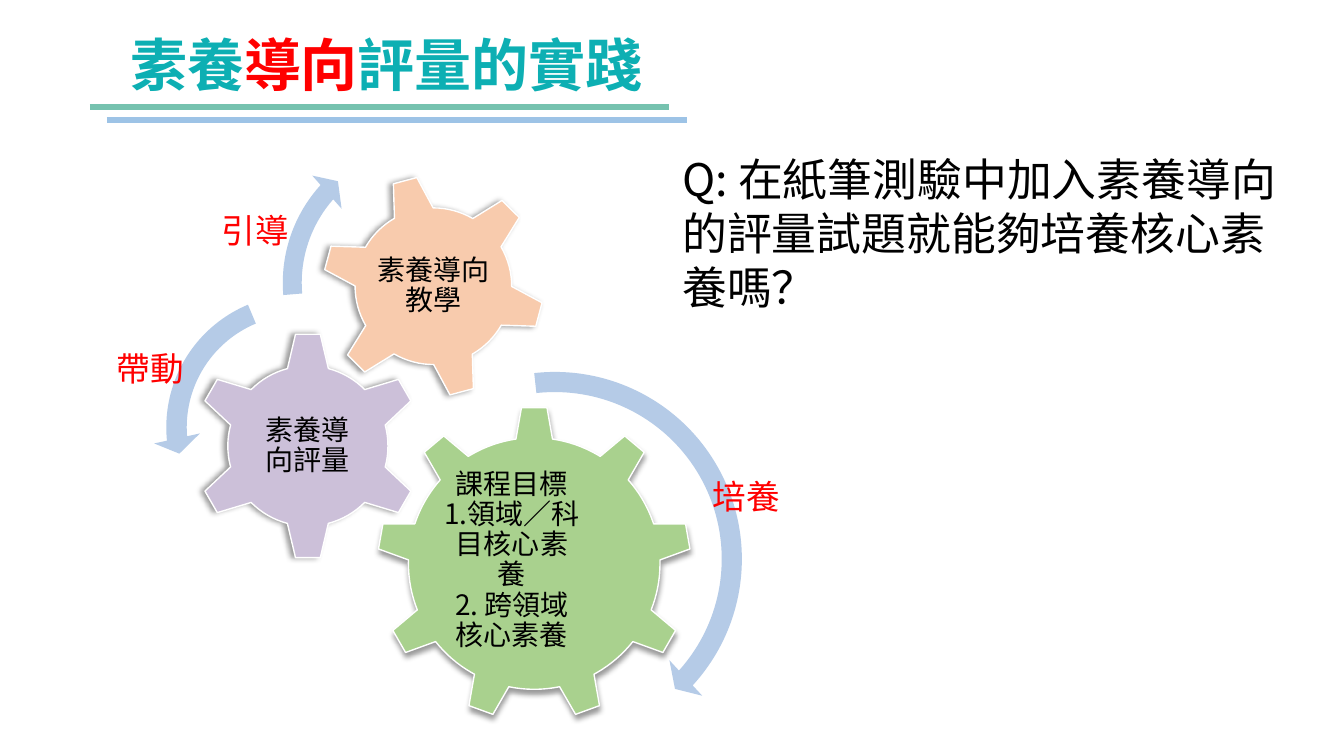
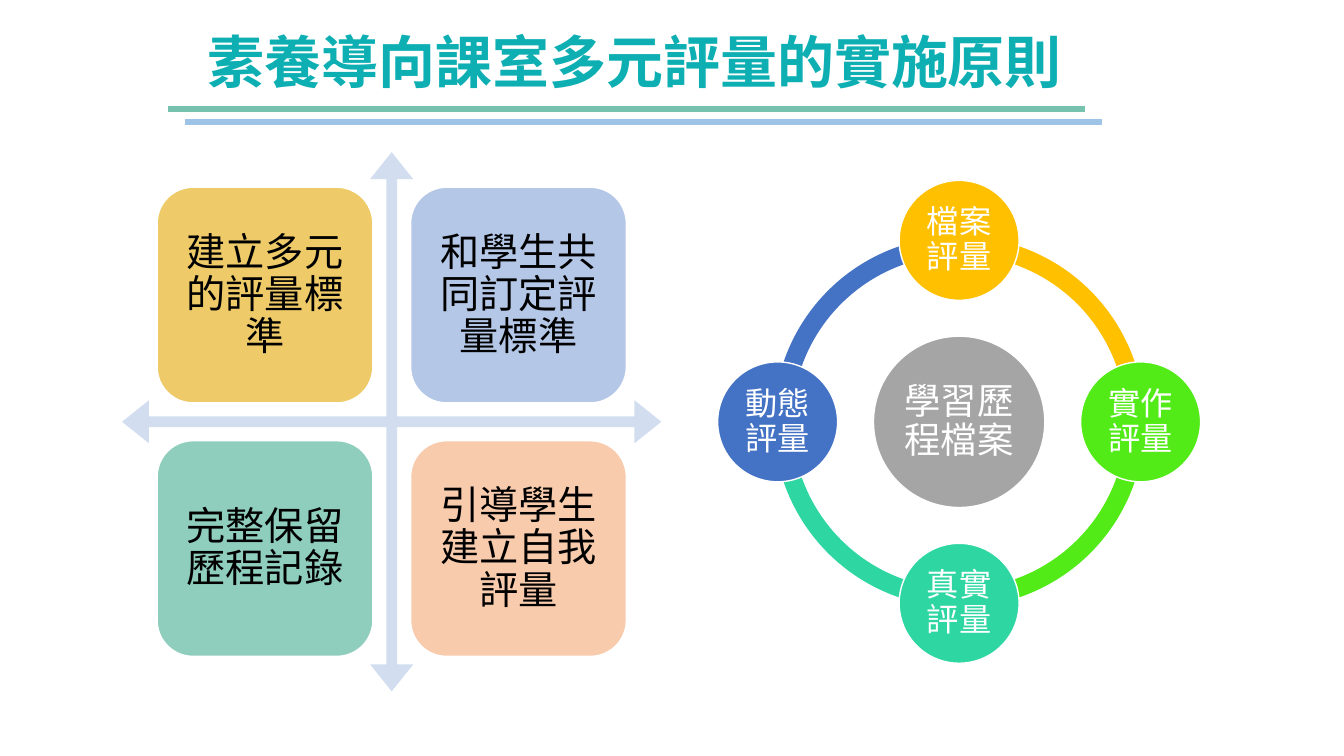
from collections import namedtuple
from math import cos, pi, sin

from lxml import etree
from pptx import Presentation
from pptx.dml.color import RGBColor
from pptx.enum.shapes import MSO_CONNECTOR, MSO_SHAPE
from pptx.enum.text import MSO_ANCHOR, MSO_AUTO_SIZE, PP_ALIGN
from pptx.oxml.ns import qn
from pptx.util import Inches, Pt

LEFT, CENTER = PP_ALIGN.LEFT, PP_ALIGN.CENTER
TOP, MIDDLE = MSO_ANCHOR.TOP, MSO_ANCHOR.MIDDLE
FIXED = MSO_AUTO_SIZE.NONE
STRAIGHT = MSO_CONNECTOR.STRAIGHT
GEAR_6, GEAR_9 = MSO_SHAPE.GEAR_6, MSO_SHAPE.GEAR_9
CLOCKWISE = MSO_SHAPE.CIRCULAR_ARROW
COUNTER = MSO_SHAPE.LEFT_CIRCULAR_ARROW
QUAD, ARC = MSO_SHAPE.QUAD_ARROW, MSO_SHAPE.BLOCK_ARC
ROUND, OVAL = MSO_SHAPE.ROUNDED_RECTANGLE, MSO_SHAPE.OVAL

CJK = "Noto Sans CJK SC"
LATIN = "Calibri"
TEAL, RED, BLACK, WHITE = "0DAFB3", "FF0000", "000000", "FFFFFF"
RULES = ("76C2AF", "9DC3E6")
ARROW_BLUE, CROSS_BLUE, HUB_GREY = "B5CBE7", "D2DEEF", "A5A5A5"
QUARTER = 54
TURN = 4 * QUARTER


class Box(namedtuple("Box", "x y w h")):
    def share(self, x, y, w, h):
        return Box(*(round(v) for v in (
            self.x + self.w * x / 100, self.y + self.h * y / 100,
            self.w * w / 100, self.h * h / 100)))


PAGE = Box(0, 0, Inches(13.33), Inches(7.5))


def color(value):
    return RGBColor.from_string(value)


def apply(target, values):
    for name, value in values.items():
        setattr(target, name, value)


def frame(tf, inset=None, anchor=MIDDLE):
    apply(tf, {"word_wrap": True, "auto_size": FIXED, "vertical_anchor": anchor})
    if inset is not None:
        apply(tf, {"margin_" + side: Inches(inset)
                   for side in ("left", "right", "top", "bottom")})


def add_run(p, text, size, ink, font=CJK, bold=False):
    r = p.add_run()
    r.text = text
    apply(r.font, {"size": Pt(size), "name": font, "bold": bold})
    r.font.color.rgb = color(ink)
    etree.SubElement(r.font._element, qn("a:ea"), typeface=CJK)


def write(tf, lines, size, ink, font=CJK, align=CENTER, pitch=1.08):
    for i, line in enumerate(lines):
        p = tf.add_paragraph() if i else tf.paragraphs[0]
        apply(p, {"alignment": align, "line_spacing": Pt(round(size * pitch, 1))})
        add_run(p, line, size, ink, font)
    return tf


def add_text(s, box, lines, size, ink, inset=None, anchor=MIDDLE, **style):
    tf = s.shapes.add_textbox(*box).text_frame
    frame(tf, inset, anchor)
    return write(tf, lines, size, ink, **style)


def add_shape(s, kind, box, fill, outline=None, adjust=()):
    sp = s.shapes.add_shape(kind, *box)
    sp.shadow.inherit = False
    sp.fill.solid()
    sp.fill.fore_color.rgb = color(fill)
    if outline:
        sp.line.color.rgb = color(outline)
        sp.line.width = Pt(1)
    else:
        sp.line.fill.background()
    for i, value in enumerate(adjust):
        sp.adjustments[i] = value
    return sp


def add_filled_text(s, kind, box, fill, text, size, ink, inset, font=CJK):
    tf = add_shape(s, kind, box, fill, WHITE).text_frame
    frame(tf, inset)
    write(tf, [text], size, ink, font)


def drop_shadow(sp, angle):
    effects = sp._element.spPr.find(qn("a:effectLst"))
    shadow = etree.SubElement(effects, qn("a:outerShdw"), blurRad=str(Pt(4)),
                              dist=str(Pt(3)), dir=str(angle * 60000),
                              rotWithShape="0")
    ink = etree.SubElement(shadow, qn("a:srgbClr"), val=BLACK)
    etree.SubElement(ink, qn("a:alpha"), val="40000")


def titled_slide(prs, runs, title_box, rule_box):
    s = prs.slides.add_slide(prs.slide_layouts[5])
    title = s.shapes.title
    apply(title, dict(zip(("left", "top", "width", "height"), title_box)))
    frame(title.text_frame)
    p = title.text_frame.paragraphs[0]
    apply(p, {"alignment": LEFT, "line_spacing": 0.9})
    for text, ink in runs:
        add_run(p, text, 40.7, ink, bold=True)
    for i, ink in enumerate(RULES):
        x, y = rule_box.x + i * Inches(0.17), rule_box.y + i * Inches(0.13)
        rule = s.shapes.add_connector(STRAIGHT, x, y, x + rule_box.w, y)
        rule.line.color.rgb = color(ink)
        rule.line.width = Pt(4.5)
        etree.SubElement(rule._element.spPr, qn("a:effectLst"))
    return s


def gear(s, kind, box, text_box, fill, lines, angle, turn=0):
    sp = add_shape(s, kind, box, fill, WHITE)
    sp.rotation = turn
    drop_shadow(sp, angle)
    return add_text(s, text_box, lines, 20, BLACK, inset=0.03)


def gear_diagram(s, box):
    goal = box.share(37.33, 47.17, 52, 52)
    tf = gear(s, GEAR_9, goal, goal.share(20, 23.5, 60, 51), "A9D18E",
              ["課程目標", "1.領域／科目核心素養", "2. 跨領域核心素養"], 90)
    tf.paragraphs[0]._p.get_or_add_pPr().set("marR", str(Inches(0.44)))
    assess = box.share(7, 34.83, 37.83, 37.83)
    gear(s, GEAR_6, assess, assess.share(25, 25.5, 50, 49), "CCC0D9",
         ["素養導向評量"], 180)
    teach = box.share(28.17, 8.83, 37, 37)
    gear(s, GEAR_6, teach, teach.share(22, 22, 56, 56), "F8CBAD",
         ["素養導向教學"], 180, 345)
    arrows = (
        (CLOCKWISE, 33.5, 39.17, 66.5, (0.05, 2.99, 25.36, 158.2, 0.06)),
        (COUNTER, 0.33, 26.5, 48.33, (0.07, 4.3, 104.89, 148.38, 0.08)),
        (CLOCKWISE, 19.67, 0.67, 52.17, (0.06, 3.94, 133.14, 105.08, 0.07)),
    )
    for kind, x, y, size, adjust in arrows:
        add_shape(s, kind, box.share(x, y, size, size), ARROW_BLUE, adjust=adjust)
    for text, x, y in (("引導", 10, 13.83), ("帶動", -7.33, 36.67),
                       ("培養", 91.17, 57.83)):
        add_text(s, box.share(x, y, 17.33, 8.33), [text], 24, RED,
                 align=LEFT, pitch=1.2)


def principle_matrix(s, box):
    add_shape(s, QUAD, box, CROSS_BLUE, adjust=(0.02, 0.04, 0.05))
    cards = (("建立多元的評量標準", "EECB68"), ("和學生共同訂定評量標準", "B4C7E7"),
             ("完整保留歷程記錄", "8FCDBD"), ("引導學生建立自我評量", "F8CBAD"))
    for i, (text, fill) in enumerate(cards):
        row, col = divmod(i, 2)
        card = box.share(6.5 + 47 * col, 6.5 + 47 * row, 40, 40)
        add_filled_text(s, ROUND, card, fill, text, 28, BLACK, 0.12)


def portfolio_cycle(s, box):
    nodes = (("檔案評量", "FFC000"), ("實作評量", "53EB17"),
             ("真實評量", "2ED7A1"), ("動態評量", "4472C4"))
    node, hub, ring = 24.84, 35.49, 76.83

    def centred(size, dx=0, dy=0):
        return box.share(50 + dx - size / 2, 50 + dy - size / 2, size, size)

    for i, (_, fill) in enumerate(nodes):
        start = (3 + i) * QUARTER % TURN
        add_shape(s, ARC, centred(ring), fill,
                  adjust=(start, (start + QUARTER) % TURN, 0.05))
    add_filled_text(s, OVAL, centred(hub), HUB_GREY, "學習歷程檔案",
                    26, WHITE, 0.04, LATIN)
    radius = 50 - node / 2
    for i, (text, fill) in enumerate(nodes):
        spot = centred(node, radius * sin(i * pi / 2), -radius * cos(i * pi / 2))
        add_filled_text(s, OVAL, spot, fill, text, 23, WHITE, 0.03, LATIN)


def practice_slide(prs):
    s = titled_slide(prs, (("素養", TEAL), ("導向", RED), ("評量的實踐", TEAL)),
                     PAGE.share(8.93, 1.73, 42.5, 14.53),
                     PAGE.share(6.68, 14.13, 43.13, 0))
    gear_diagram(s, PAGE.share(11.25, 16, 45, 80))
    add_text(s, PAGE.share(50.03, 19.47, 47.4, 22.93),
             ["Q: 在紙筆測驗中加入素養導向的評量試題就能夠培養核心素養嗎？"],
             32, BLACK, anchor=TOP, align=LEFT, pitch=1.2)


def principles_slide(prs):
    s = titled_slide(prs, (("素養導向課室多元評量的實施原則", TEAL),),
                     PAGE.share(14.7, 1.33, 66.23, 14.53),
                     PAGE.share(12.5, 14.4, 68.2, 0))
    principle_matrix(s, PAGE.share(9.08, 20.13, 40.13, 71.33))
    portfolio_cycle(s, PAGE.share(53.4, 23.87, 35.93, 63.87))


def main():
    prs = Presentation()
    prs.slide_width, prs.slide_height = PAGE.w, PAGE.h
    practice_slide(prs)
    principles_slide(prs)
    prs.save("out.pptx")


if __name__ == "__main__":
    main()
